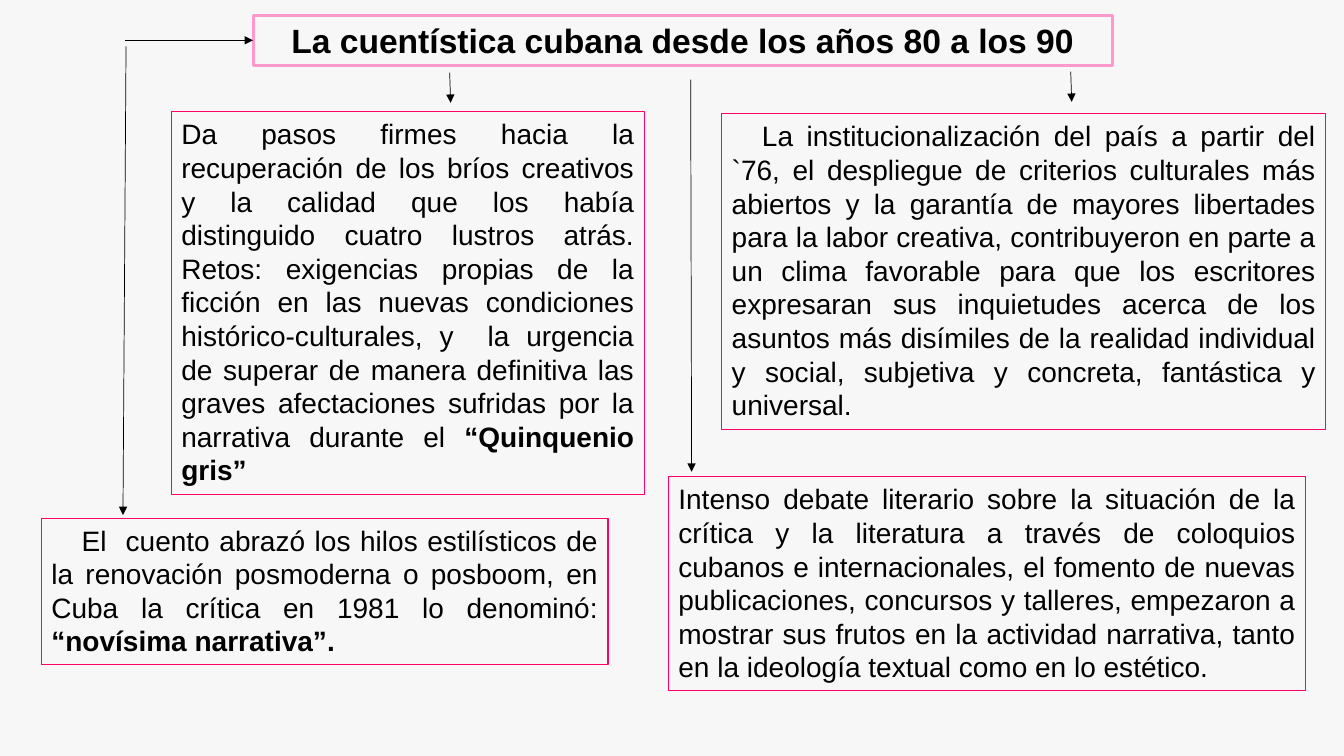
"""Build a slide mapping the Cuban short story from the 80s to the 90s."""
from lxml import etree
from pptx import Presentation
from pptx.dml.color import RGBColor
from pptx.enum.shapes import MSO_CONNECTOR
from pptx.enum.text import MSO_ANCHOR, MSO_AUTO_SIZE, PP_ALIGN
from pptx.oxml.ns import qn
from pptx.util import Inches, Pt

STRAIGHT = MSO_CONNECTOR.STRAIGHT
TOP, FIXED = MSO_ANCHOR.TOP, MSO_AUTO_SIZE.NONE
CENTER, JUSTIFY = PP_ALIGN.CENTER, PP_ALIGN.JUSTIFY
PAPER = RGBColor(0xF7, 0xF7, 0xF7)
BLACK = RGBColor(0x00, 0x00, 0x00)
PINK = RGBColor(0xFF, 0x99, 0xCC)
ROSE = RGBColor(0xFF, 0x00, 0x66)
FONT = "Arial"
INDENT = Inches(0.3)

deck = Presentation()
deck.slide_width, deck.slide_height = Inches(13.33), Inches(7.5)
slide = deck.slides.add_slide(deck.slide_layouts[5])
slide.background.fill.solid()
slide.background.fill.fore_color.rgb = PAPER


def place(*shares):
    """Turn percent shares of width and height, by turns, into lengths."""
    sides = (deck.slide_width, deck.slide_height) * 2
    return [round(side * share / 100) for side, share in zip(sides, shares)]


def write(shape, runs, size, align, color, weight):
    """Frame a shape and fill it with one paragraph of (text, bold) runs."""
    shape.line.color.rgb = color
    shape.line.width = Pt(weight)
    frame = shape.text_frame
    frame.word_wrap = True
    frame.auto_size = FIXED
    frame.vertical_anchor = TOP
    para = frame.paragraphs[0]
    para.alignment = align
    para.line_spacing = Pt(size * 1.2)
    for text, bold in runs:
        run = para.add_run()
        run.text = text
        run.font.name = FONT
        run.font.size = Pt(size)
        run.font.bold = bold
        run.font.color.rgb = BLACK
    return para


title = slide.shapes.title
title.left, title.top, title.width, title.height = place(18.83, 2, 63.92, 6.67)
heading = [("La cuentística cubana desde los años 80 a los 90", True)]
write(title, heading, 24, CENTER, PINK, 2.25)

notes = [
    ((12.75, 14.8, 35.18, 50.67), 0, [
        ("Da pasos firmes hacia la recuperación de los bríos creativos y la "
         "calidad que los había distinguido cuatro lustros atrás. Retos: "
         "exigencias propias de la ficción en las nuevas condiciones "
         "histórico-culturales, y  la urgencia de superar de manera "
         "definitiva las graves afectaciones sufridas por la narrativa "
         "durante el ", False),
        ("“Quinquenio gris”", True)]),
    ((3.08, 68.53, 42.16, 19.33), INDENT, [
        ("El  cuento abrazó los hilos estilísticos de la renovación "
         "posmoderna o posboom, en Cuba la crítica en 1981 lo denominó: ",
         False),
        ("“novísima narrativa”.", True)]),
    ((49.74, 63.07, 47.41, 28.27), 0, [
        ("Intenso debate literario sobre la situación de la crítica y la "
         "literatura a través de coloquios cubanos e internacionales, el "
         "fomento de nuevas publicaciones, concursos y talleres, empezaron "
         "a mostrar sus frutos en la actividad narrativa, tanto en la "
         "ideología textual como en lo estético.", False)]),
    ((53.71, 15.07, 44.94, 41.73), INDENT, [
        ("La institucionalización del país a partir del `76, el despliegue "
         "de criterios culturales más abiertos y la garantía de mayores "
         "libertades para la labor creativa, contribuyeron en parte a un "
         "clima favorable para que los escritores expresaran sus "
         "inquietudes acerca de los asuntos más disímiles de la realidad "
         "individual y social, subjetiva y concreta, fantástica y "
         "universal.", False)]),
]
for spot, indent, runs in notes:
    box = slide.shapes.add_textbox(*place(*spot))
    para = write(box, runs, 20, JUSTIFY, ROSE, 0.75)
    props = para._p.get_or_add_pPr()
    props.set("marL", "0")
    props.set("indent", str(indent))

arrows = [
    (9.38, 6.13, 9.15, 68.13),
    (9.3, 5.33, 18.83, 5.33),
    (51.39, 10.53, 51.46, 62.4),
    (79.67, 9.47, 79.74, 13.47),
    (33.46, 9.6, 33.53, 13.6),
]
for ends in arrows:
    arrow = slide.shapes.add_connector(STRAIGHT, *place(*ends))
    arrow.line.color.rgb = BLACK
    arrow.line.width = Pt(0.5)
    stroke = arrow.line._get_or_add_ln()
    etree.SubElement(stroke, qn("a:tailEnd"), type="triangle")
    etree.SubElement(arrow._element.spPr, qn("a:effectLst"))

deck.save("out.pptx")
